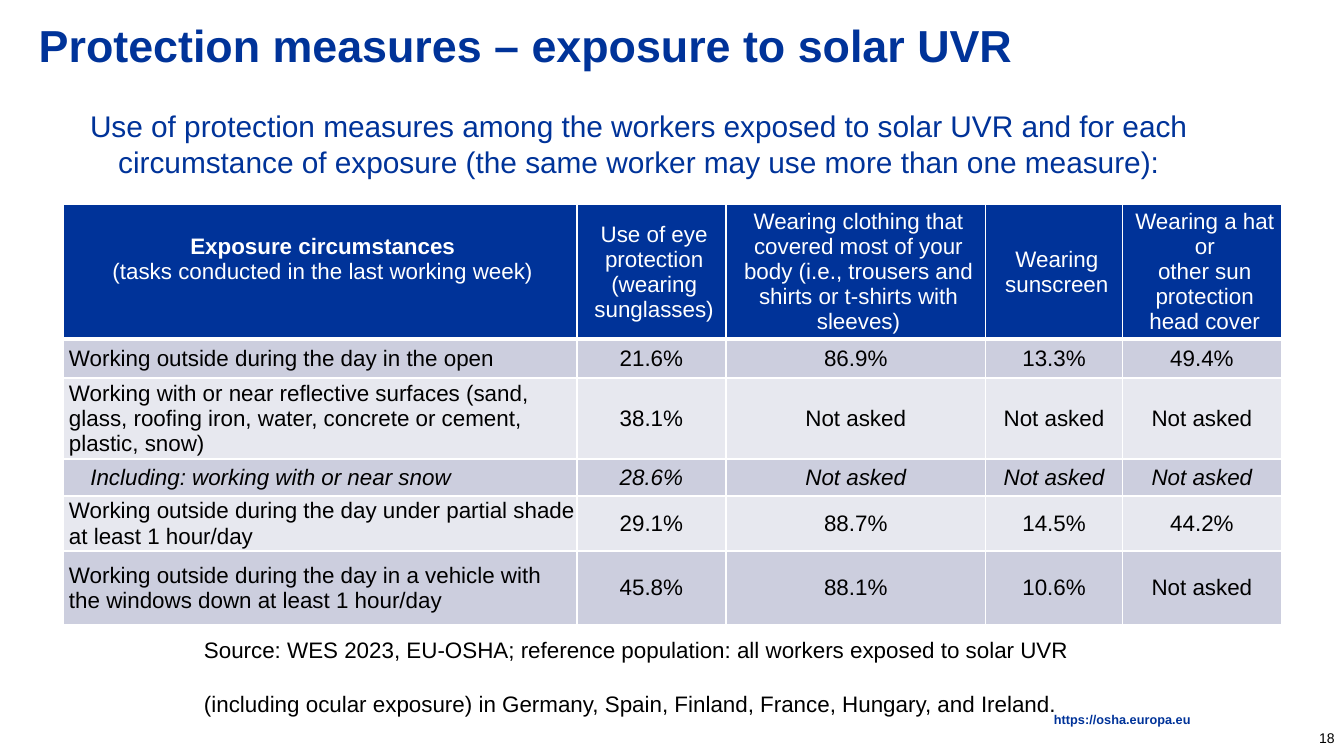
from dataclasses import dataclass, field
from typing import Any

from lxml.etree import SubElement
from pptx import Presentation
from pptx.dml.color import RGBColor
from pptx.enum.text import MSO_ANCHOR as Anchor, PP_ALIGN as Align
from pptx.oxml.ns import qn
from pptx.util import Pt

BLUE, BLACK, WHITE = "003399", "000000", "FFFFFF"
BANDS = ("CCCEDE", "E7E8EF")
COLS = (275, 80, 139, 73.5, 85)
ROWS = (70, 21, 42, 20, 29.5, 39.5)
SIDES = ("left", "top", "right", "bottom")
HEAD = (
    "Exposure circumstances\n(tasks conducted in the last working week)",
    "Use of eye protection (wearing sunglasses)",
    "Wearing clothing that covered most of your body (i.e., trousers and shirts or t-shirts with sleeves)",
    "Wearing sunscreen",
    "Wearing a hat or\nother sun protection head cover",
)
NONE = "Not asked"
BODY = (
    ("Working outside during the day in the open", "21.6%", "86.9%", "13.3%", "49.4%"),
    ("Working with or near reflective surfaces (sand, glass, roofing iron, water, concrete or cement, plastic, snow)",
     "38.1%", NONE, NONE, NONE),
    ("Including: working with or near snow", "28.6%", NONE, NONE, NONE),
    ("Working outside during the day under partial shade at least 1 hour/day", "29.1%", "88.7%", "14.5%", "44.2%"),
    ("Working outside during the day in a vehicle with the windows down at least 1 hour/day",
     "45.8%", "88.1%", "10.6%", NONE),
)
SNOW = 3


@dataclass
class Label:
    text: str
    area: tuple[float, float, float, float]
    size: float
    color: str = BLUE
    bold: bool = False
    align: Any = Align.LEFT
    anchor: Any = Anchor.TOP
    inset: tuple[float, float, float, float] = (7.2, 3.6, 7.2, 3.6)
    para: dict[str, Any] = field(default_factory=dict)


LABELS = (
    Label("18", (672, 384.5, 48, 21.5), 7.5, BLACK, align=Align.RIGHT,
          anchor=Anchor.MIDDLE, inset=(5, 3, 5, 3)),
    Label("https://osha.europa.eu", (178.5, 382.3, 459.4, 6.5), 6.8, bold=True,
          align=Align.RIGHT, inset=(0, 0, 0, 0), para={"line_spacing": 0.9}),
    Label("Protection measures – exposure to solar UVR", (13.7, 9.4, 676, 29), 24,
          bold=True, anchor=Anchor.MIDDLE),
    Label("Use of protection measures among the workers exposed to solar UVR and for each "
          "circumstance of exposure (the same worker may use more than one measure):",
          (23.8, 54, 637, 46), 16, align=Align.CENTER, anchor=Anchor.MIDDLE),
    Label("Source: WES 2023, EU-OSHA; reference population: all workers exposed to solar UVR\n"
          "(including ocular exposure) in Germany, Spain, Finland, France, Hungary, and Ireland.",
          (102.2, 337, 479, 36), 12, BLACK, para={"space_after": Pt(14.6)}),
)


def paint(part: Any, color: str) -> None:
    part.rgb = RGBColor.from_string(color)


def apply(item: Any, form: dict[str, Any]) -> None:
    for name, value in form.items():
        setattr(item, name, value)


def pad(item: Any, inset: tuple[float, float, float, float]) -> None:
    apply(item, {f"margin_{side}": Pt(gap) for side, gap in zip(SIDES, inset)})


def style(font: Any, size: float, color: str, bold: bool = False, slant: bool = False) -> None:
    apply(font, {"name": "Arial", "size": Pt(size), "bold": bold, "italic": slant})
    paint(font.color, color)


def draw_label(slide: Any, label: Label) -> None:
    frame = slide.shapes.add_textbox(*map(Pt, label.area)).text_frame
    apply(frame, {"word_wrap": True, "vertical_anchor": label.anchor})
    pad(frame, label.inset)
    frame.text = label.text
    for para in frame.paragraphs:
        apply(para, {"alignment": label.align, **label.para})
        for run in para.runs:
            style(run.font, label.size, label.color, label.bold)


def edge(cell: Any, row: int) -> None:
    props = cell._tc.get_or_add_tcPr()
    widths = {"L": 1, "R": 1, "T": 3 if row == 1 else 1, "B": 1 if row else 3}
    for spot, (side, width) in enumerate(widths.items()):
        line = SubElement(props, qn(f"a:ln{side}"), w=str(int(Pt(width))))
        SubElement(SubElement(line, qn("a:solidFill")), qn("a:srgbClr"), val=WHITE)
        props.insert(spot, line)


def fill_cell(cell: Any, text: str, row: int, col: int) -> None:
    head, first = row == 0, col == 0
    left = 14.4 if first and row == SNOW else 3 if head or first else 0
    base = 14 if head and first else 0
    pad(cell, (left, 0, 0, base))
    cell.vertical_anchor = Anchor.MIDDLE
    cell.fill.solid()
    paint(cell.fill.fore_color, BLUE if head else BANDS[(row - 1) % 2])
    edge(cell, row)
    para = cell.text_frame.paragraphs[0]
    para.alignment = Align.LEFT if first and not head else Align.CENTER
    for spot, words in enumerate(text.split("\n")):
        if spot:
            para.add_line_break()
        run = para.add_run()
        run.text = words
        style(run.font, 12, WHITE if head else BLACK,
              head and first and spot == 0, row == SNOW)


def draw_table(slide: Any) -> None:
    area = map(Pt, (34, 109.6, sum(COLS), sum(ROWS)))
    table = slide.shapes.add_table(len(ROWS), len(COLS), *area).table
    for col, width in zip(table.columns, COLS):
        col.width = Pt(width)
    for row, height in zip(table.rows, ROWS):
        row.height = Pt(height)
    for row, texts in enumerate((HEAD, *BODY)):
        for col, text in enumerate(texts):
            fill_cell(table.cell(row, col), text, row, col)


def main() -> None:
    deck = Presentation()
    apply(deck, {"slide_width": Pt(720), "slide_height": Pt(405)})
    slide = deck.slides.add_slide(deck.slide_layouts[6])
    for label in LABELS:
        draw_label(slide, label)
    draw_table(slide)
    deck.save("out.pptx")


if __name__ == "__main__":
    main()
